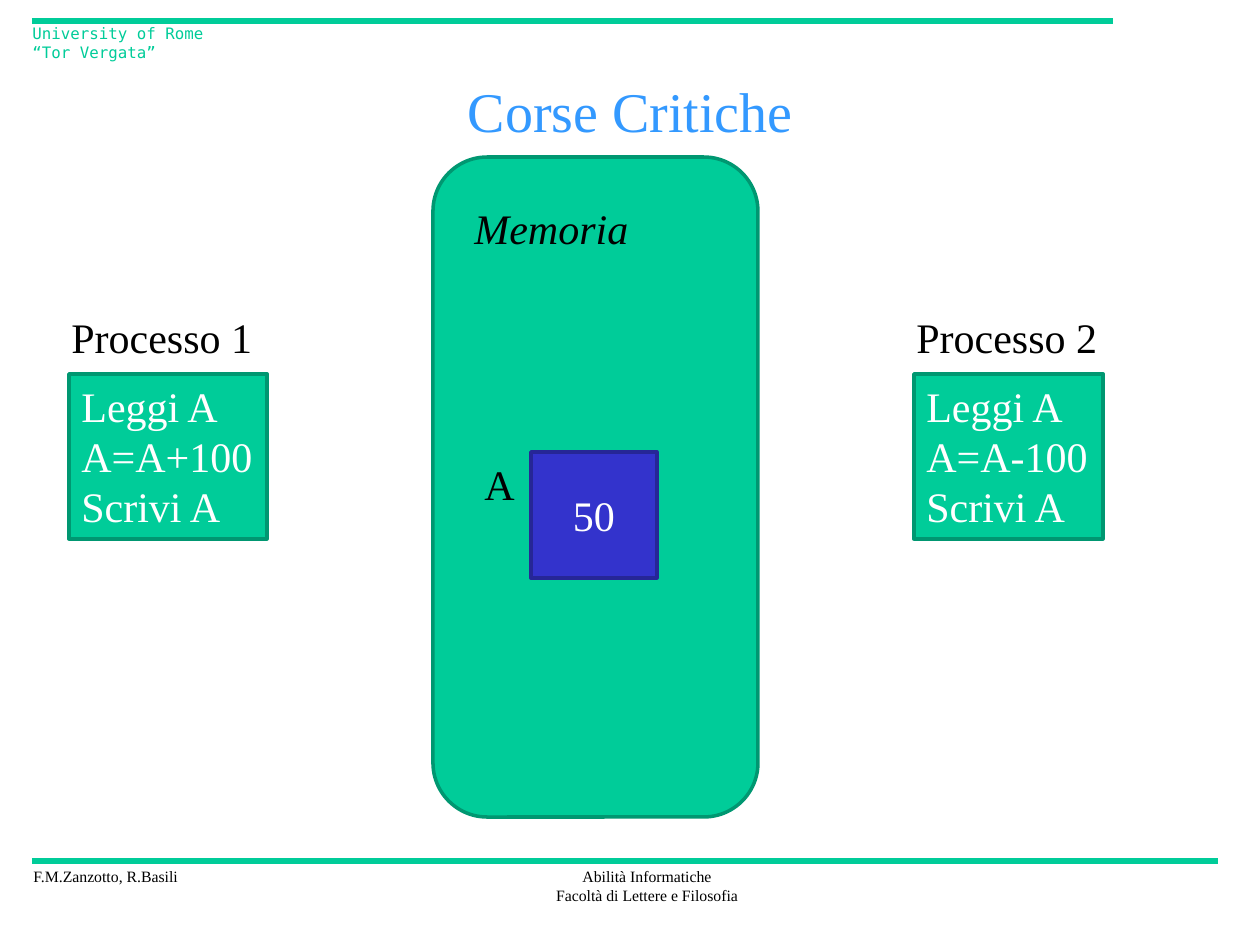
from dataclasses import dataclass
from lxml.etree import SubElement
from pptx import Presentation
from pptx.dml.color import RGBColor as Color
from pptx.enum.shapes import MSO_CONNECTOR as Connector, MSO_SHAPE as Shape
from pptx.enum.text import MSO_ANCHOR as Anchor, MSO_AUTO_SIZE as AutoSize, PP_ALIGN as Align
from pptx.oxml.ns import qn
from pptx.util import Emu, Pt


@dataclass(frozen=True)
class Theme:
    green: str = "00CC99"
    green_edge: str = "009771"
    blue: str = "3333CC"
    blue_edge: str = "262697"
    title: str = "3399FF"
    black: str = "000000"
    white: str = "FFFFFF"
    serif: str = "Times New Roman"
    mono: str = "DejaVu Sans Mono"
    title_size: int = 32
    body_size: int = 24
    small_size: int = 9
    edge_width: int = 2
    rule_width: int = 3


THEME = Theme()
SCALE = 914400 / 126


def px(length):
    return Emu(round(length * SCALE))


def write(shape, text, color, size=THEME.body_size, font=THEME.serif,
          italic=None, align=Align.LEFT, **frame_format):
    frame = shape.text_frame
    frame.text = text
    for name, value in frame_format.items():
        setattr(frame, name, value)
    for paragraph in frame.paragraphs:
        paragraph.alignment = align
        for name, value in {"name": font, "size": Pt(size), "italic": italic}.items():
            setattr(paragraph.font, name, value)
        paragraph.font.color.rgb = Color.from_string(color)


def add_label(slide, box, text, color=THEME.black, **text_format):
    label = slide.shapes.add_textbox(*map(px, box))
    write(label, text, color, word_wrap=False,
          auto_size=AutoSize.SHAPE_TO_FIT_TEXT, **text_format)


def add_block(slide, kind, box, fill, edge):
    block = slide.shapes.add_shape(kind, *map(px, box))
    block.shadow.inherit = False
    block.fill.solid()
    block.fill.fore_color.rgb = Color.from_string(fill)
    block.line.color.rgb = Color.from_string(edge)
    block.line.width = Pt(THEME.edge_width)
    return block


def add_rule(slide, left, top, width):
    rule = slide.shapes.add_connector(
        Connector.STRAIGHT, px(left), px(top), px(left + width), px(top))
    rule.line.color.rgb = Color.from_string(THEME.green)
    rule.line.width = Pt(THEME.rule_width)
    SubElement(rule.element.spPr, qn("a:effectLst"))


def add_header(slide, left, top, width):
    add_rule(slide, left, top, width)
    add_label(slide, (left - 12, top - 3, 215, 32), "University of Rome\v“Tor Vergata”",
              THEME.green, size=THEME.small_size, font=THEME.mono)


def add_footer(slide, left, top, width):
    add_rule(slide, left, top, width)
    add_label(slide, (left - 11, top, 171, 32), "F.M.Zanzotto, R.Basili",
              size=THEME.small_size)
    add_label(slide, (left + 511, top, 208, 50),
              "Abilità Informatiche\nFacoltà di Lettere e Filosofia",
              size=THEME.small_size, align=Align.CENTER)


def add_title(slide, box, text):
    title = slide.shapes.title
    for name, value in zip(("left", "top", "width", "height"), map(px, box)):
        setattr(title, name, value)
    write(title, text, THEME.title, size=THEME.title_size, align=Align.CENTER,
          vertical_anchor=Anchor.MIDDLE, auto_size=AutoSize.NONE)


def add_memory(slide, left, top, width, height):
    add_block(slide, Shape.ROUNDED_RECTANGLE, (left, top, width, height),
              THEME.green, THEME.green_edge)
    add_label(slide, (left + 29, top + 39, 180, 64), "Memoria", italic=True)
    add_label(slide, (left + 39, top + 295, 57, 64), "A")
    cell = add_block(slide, Shape.RECTANGLE, (left + 98, top + 295, 126, 126),
                     THEME.blue, THEME.blue_edge)
    write(cell, "50", THEME.white, align=Align.CENTER, vertical_anchor=Anchor.MIDDLE)


def add_process(slide, left, top, width, number, operation):
    add_label(slide, (left, top, 208, 64), f"Processo {number}")
    steps = add_block(slide, Shape.RECTANGLE, (left + 10, top + 69, width, 165),
                      THEME.green, THEME.green_edge)
    write(steps, f"Leggi A\n{operation}\nScrivi A", THEME.white, word_wrap=False,
          auto_size=AutoSize.SHAPE_TO_FIT_TEXT, vertical_anchor=Anchor.TOP)


def main():
    presentation = Presentation()
    presentation.slide_width, presentation.slide_height = px(1260), px(945)
    slide = presentation.slides.add_slide(presentation.slide_layouts[5])
    add_header(slide, 32, 21, 1081)
    add_footer(slide, 32, 861, 1186)
    add_title(slide, (95, 63, 1071, 95), "Corse Critiche")
    add_memory(slide, 433, 157, 325, 660)
    add_process(slide, 59, 305, 198, 1, "A=A+100")
    add_process(slide, 904, 305, 189, 2, "A=A-100")
    presentation.save("out.pptx")


if __name__ == "__main__":
    main()
